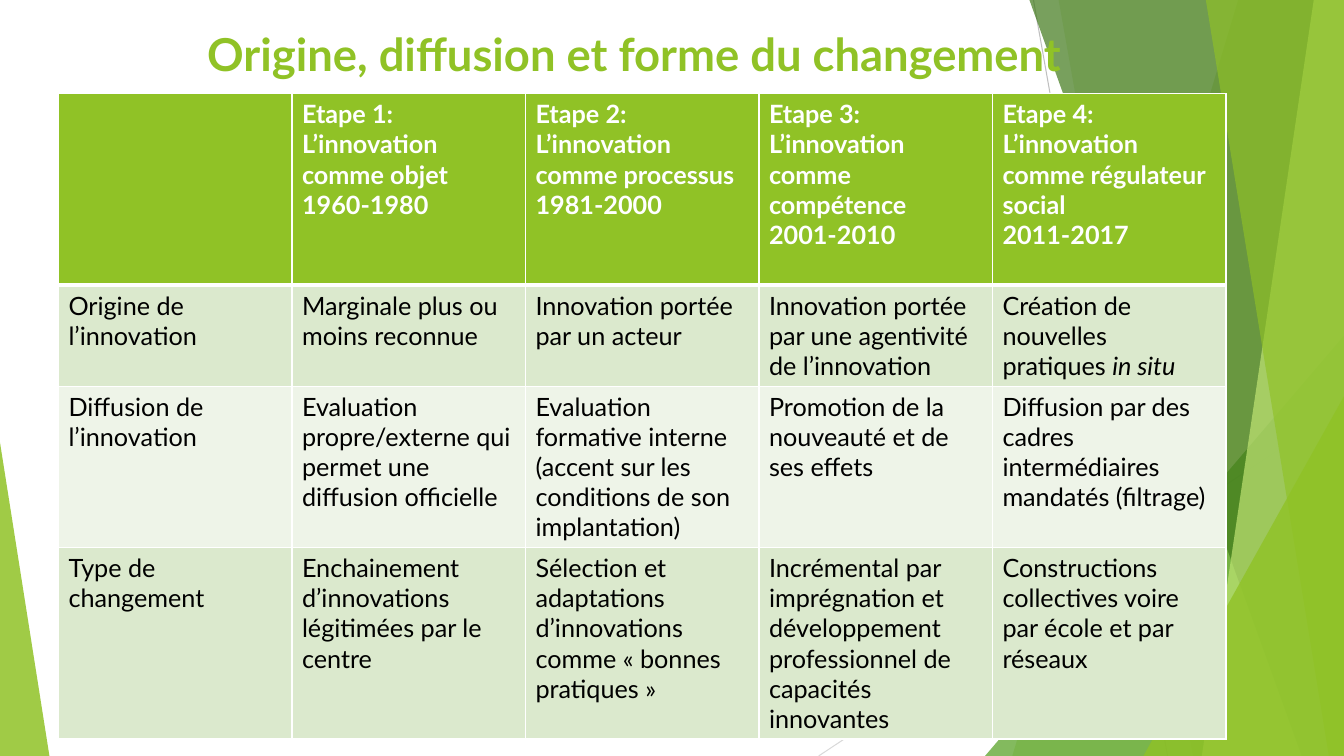
import pptx
import pptx.util
import pptx.dml.color
import pptx.enum.shapes
import pptx.enum.text
import pptx.oxml
import pptx.oxml.ns

Inches, Pt = pptx.util.Inches, pptx.util.Pt
GREEN, WHITE, BLACK = "90C226", "FFFFFF", "000000"
FONT = "Lato"
WIDE, HIGH = 13.33, 7.5
NS = pptx.oxml.ns.nsdecls("a")


def paint(fill, color, alpha=100):
    """Fill with a hex colour at an opacity in percent."""
    fill.solid()
    fill.fore_color.rgb = pptx.dml.color.RGBColor.from_string(color)
    if alpha < 100:
        for tint in fill._xPr.iter(pptx.oxml.ns.qn("a:srgbClr")):
            tint.append(pptx.oxml.parse_xml(f'<a:alpha {NS} val="{alpha * 1000}"/>'))


def style(para, size, color, bold):
    font = para.font
    font.name, font.size, font.bold = FONT, Pt(size), bold
    paint(font.fill, color)


deck = pptx.Presentation()
deck.slide_width, deck.slide_height = Inches(WIDE), Inches(HIGH)
slide = deck.slides.add_slide(deck.slide_layouts[5])
shapes = slide.shapes

# Thin lines behind the bands
for x1, y1, x2, y2, color in [
    (10.25, 0, 11.58, HIGH, "BFBFBF"),
    (WIDE, 4.03, 8.12, HIGH, "D9D9D9"),
]:
    line = shapes.add_connector(
        pptx.enum.shapes.MSO_CONNECTOR.STRAIGHT,
        Inches(x1), Inches(y1), Inches(x2), Inches(y2))
    line.line.width = Pt(0.75)
    paint(line.line.fill, color)
    line._element.spPr.append(pptx.oxml.parse_xml(f"<a:effectLst {NS}/>"))

# Bands: (top x, bottom x); triangles: (left, top, width, apex)
decor = [
    ((12.28, 10.04), GREEN, 30),
    ((10.5, 11.83), GREEN, 20),
    ((9.77, 3.33, 3.56, 1), "54A021", 72),
    ((10.21, 12.91), "3F7819", 70),
    ((13.03, 11.92), "C0E474", 70),
    ((11.96, 13.18), GREEN, 65),
    ((11.34, 3.93, 1.99, 1), GREEN, 80),
    ((0, 4.39, 0.49, 0), GREEN, 85),
]
for place, color, alpha in decor:
    if len(place) == 2:
        top, base = place
        form = shapes.build_freeform(Inches(top), 0)
        form.add_line_segments([
            (Inches(WIDE), 0), (Inches(WIDE), Inches(HIGH)),
            (Inches(base), Inches(HIGH))])
        shape = form.convert_to_shape()
    else:
        left, top, width, apex = place
        shape = shapes.add_shape(
            pptx.enum.shapes.MSO_SHAPE.ISOSCELES_TRIANGLE,
            Inches(left), Inches(top), Inches(width), Inches(HIGH - top))
        shape.adjustments[0] = apex
    shape.shadow.inherit = False
    shape.line.fill.background()
    paint(shape.fill, color, alpha)

# Title, brought in front of the bands
title = shapes.title
title.left, title.top = Inches(0.75), Inches(0.24)
title.width, title.height = Inches(11.08), Inches(0.58)
frame = title.text_frame
frame.text = "Origine, diffusion et forme du changement"
frame.auto_size = pptx.enum.text.MSO_AUTO_SIZE.NONE
frame.vertical_anchor = pptx.enum.text.MSO_ANCHOR.MIDDLE
frame.paragraphs[0].alignment = pptx.enum.text.PP_ALIGN.CENTER
style(frame.paragraphs[0], 32.4, GREEN, True)
title.element.getparent().append(title.element)

# Table; "\n" parts paragraphs, "*" opens italics
rows = [
    ["",
     "Etape 1: L’innovation comme objet\n1960-1980",
     "Etape 2: L’innovation comme processus\n1981-2000",
     "Etape 3:\nL’innovation comme compétence\n2001-2010",
     "Etape 4: L’innovation comme régulateur social\n2011-2017"],
    ["Origine de l’innovation",
     "Marginale plus ou moins reconnue",
     "Innovation portée par un acteur",
     "Innovation portée par une agentivité de l’innovation",
     "Création de nouvelles pratiques *in situ"],
    ["Diffusion de l’innovation",
     "Evaluation propre/externe qui permet une diffusion officielle",
     "Evaluation formative interne (accent sur les conditions de son implantation)",
     "Promotion de la nouveauté et de ses effets",
     "Diffusion par des cadres intermédiaires mandatés (filtrage)"],
    ["Type de changement",
     "Enchainement d’innovations légitimées par le centre",
     "Sélection et adaptations d’innovations comme « bonnes pratiques »",
     "Incrémental par imprégnation et développement professionnel de capacités innovantes",
     "Constructions collectives voire par école et par réseaux"],
]
heights = [1.9, 1, 1.6, 1.9]
fills = [GREEN, "DBE9CD", "EEF4E8", "DBE9CD"]
table = shapes.add_table(
    len(rows), len(rows[0]), Inches(0.58), Inches(0.93),
    Inches(11.58), Inches(sum(heights))).table
for r, texts in enumerate(rows):
    table.rows[r].height = Inches(heights[r])
    head = r == 0
    edges = {"L": 1, "R": 1, "T": 3 if r == 1 else 1, "B": 3 if head else 1}
    for c, text in enumerate(texts):
        cell = table.cell(r, c)
        paint(cell.fill, fills[r])
        props = cell._tc.get_or_add_tcPr()
        for i, (side, width) in enumerate(edges.items()):
            props.insert(i, pptx.oxml.parse_xml(
                f'<a:ln{side} {NS} w="{Pt(width)}"><a:solidFill>'
                f'<a:srgbClr val="{WHITE}"/></a:solidFill></a:ln{side}>'))
        for i, part in enumerate(text.split("\n")):
            frame = cell.text_frame
            para = frame.add_paragraph() if i else frame.paragraphs[0]
            style(para, 18, WHITE if head else BLACK, head)
            for k, piece in enumerate(part.split("*")):
                run = para.add_run()
                run.text = piece
                if k:
                    run.font.italic = True

deck.save("out.pptx")
